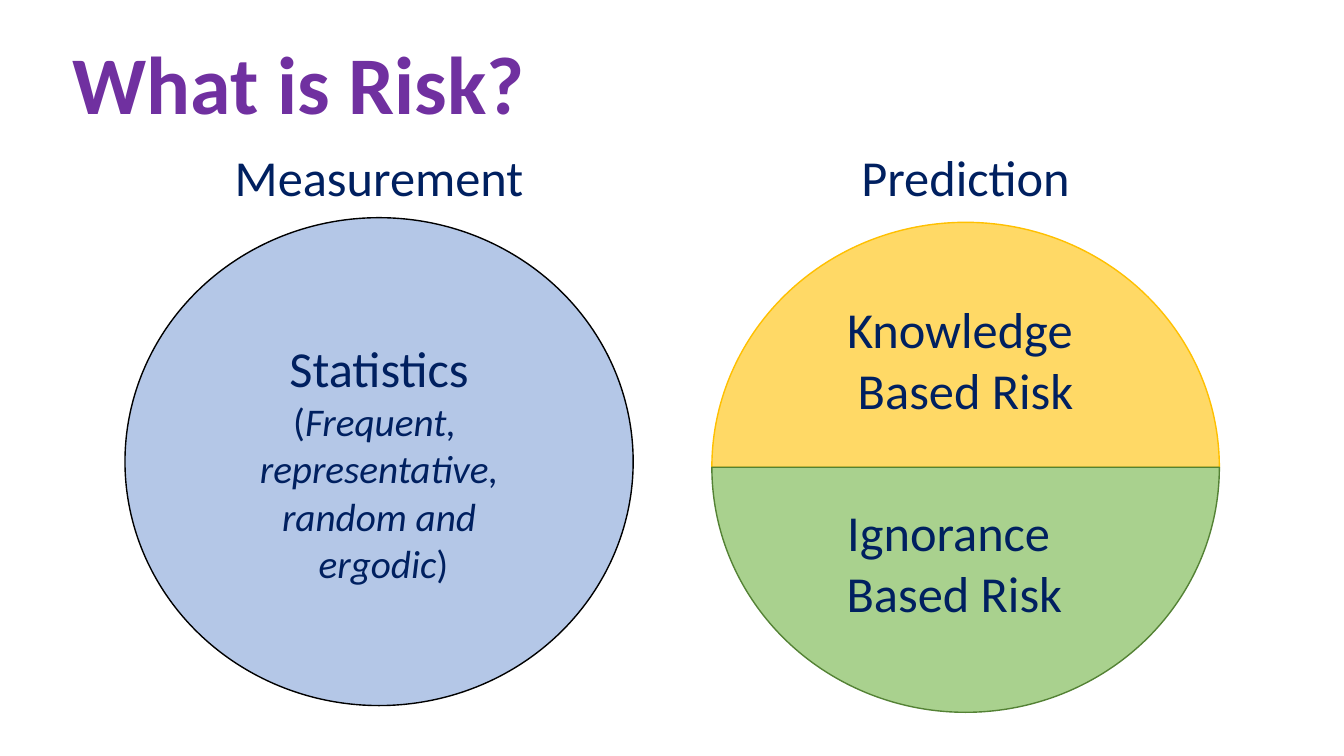
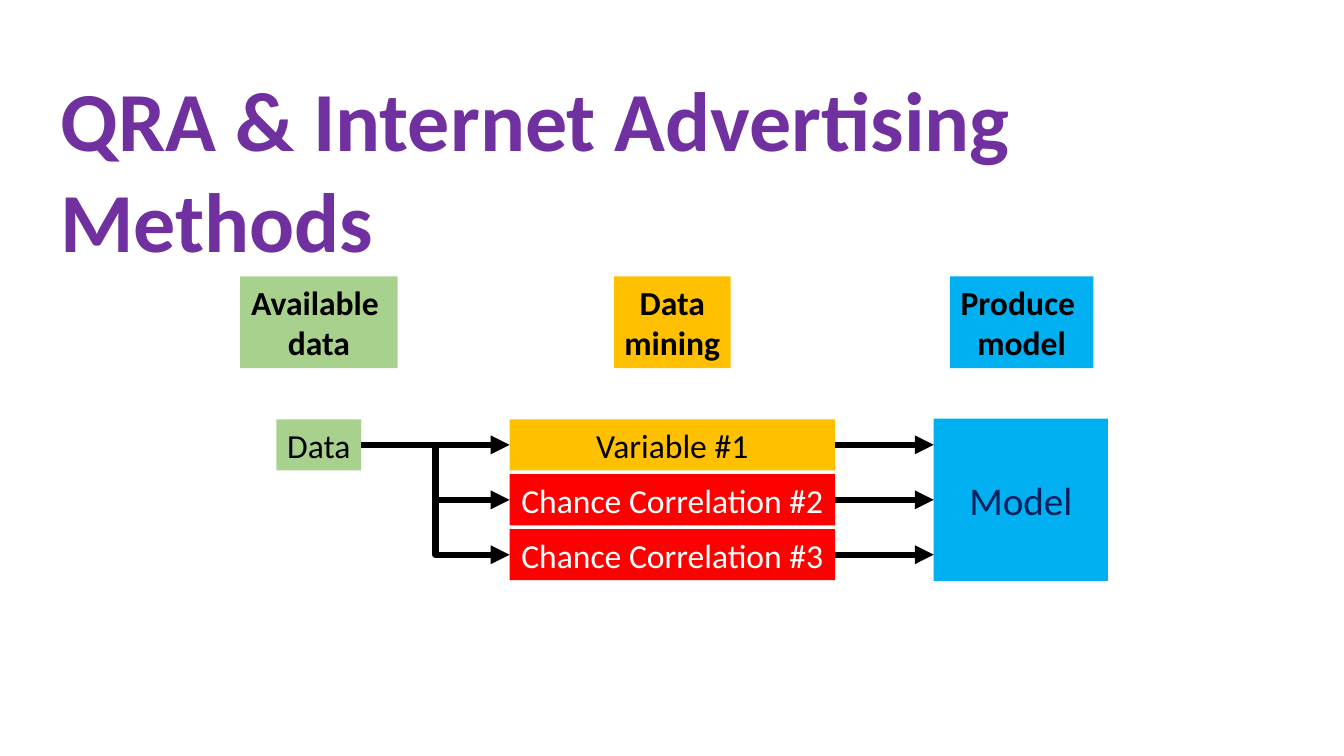
import pptx
import pptx.dml.color
import pptx.enum.shapes
import pptx.enum.text
import pptx.util
from pptx.oxml import parse_xml
from pptx.oxml.ns import nsdecls, qn

Pt = pptx.util.Pt
SHAPE = pptx.enum.shapes.MSO_SHAPE
CONNECTOR = pptx.enum.shapes.MSO_CONNECTOR
ALIGN = pptx.enum.text.PP_ALIGN
ANCHOR = pptx.enum.text.MSO_ANCHOR
AUTO_SIZE = pptx.enum.text.MSO_AUTO_SIZE

PURPLE, NAVY, BLACK, WHITE = "7030A0", "002060", "000000", "FFFFFF"
GREEN, AMBER, BLUE, RED = "A9D18E", "FFC000", "00B0F0", "FF0000"
TOP, LEFT, BOTTOM, RIGHT = range(4)
HEADING_H = 51
FONT = {"name": "Calibri", "size": Pt(24), "bold": False, "italic": False}


def rgb(value):
    return pptx.dml.color.RGBColor.from_string(value)


def add_run(p, text, color, **formats):
    """Add text to a paragraph, turning each newline into a line break."""
    for i, line in enumerate(text.split("\n")):
        if i:
            p.add_line_break()
        r = p.add_run()
        r.text = line
        for name, value in {**FONT, **formats}.items():
            setattr(r.font, name, value)
        r.font.color.rgb = rgb(color)


def set_frame(tf, anchor=ANCHOR.MIDDLE, wrap=False):
    tf.auto_size = AUTO_SIZE.NONE
    tf.word_wrap = wrap
    tf.vertical_anchor = anchor


def add_text(sp, paragraphs, color, align=ALIGN.CENTER):
    """Fill a shape; each paragraph is a list of (text, formats) runs."""
    tf = sp.text_frame
    set_frame(tf)
    for i, runs in enumerate(paragraphs):
        p = tf.paragraphs[0] if i == 0 else tf.add_paragraph()
        p.alignment = align
        for text, formats in runs:
            add_run(p, text, color, **formats)


def add_label(s, box, paragraphs):
    add_text(s.shapes.add_textbox(*map(Pt, box)), paragraphs, NAVY)


def add_shape(s, kind, box, fill, line=None):
    sp = s.shapes.add_shape(kind, *map(Pt, box))
    sp.shadow.inherit = False
    sp.fill.solid()
    sp.fill.fore_color.rgb = rgb(fill)
    if line:
        sp.line.color.rgb = rgb(line)
        sp.line.width = Pt(1)
    else:
        sp.line.fill.background()
    return sp


def add_block(s, box, fill, text, color=BLACK, **formats):
    sp = add_shape(s, SHAPE.RECTANGLE, box, fill)
    add_text(sp, [[(text, formats)]], color)
    return sp


def add_arrow(s, start, end, kind=CONNECTOR.STRAIGHT):
    """Draw an arrow between (x, y) points or (shape, side) pairs."""
    points = [(0, 0) if hasattr(e[0], "shape_id") else e for e in (start, end)]
    c = s.shapes.add_connector(kind, *(Pt(v) for point in points for v in point))
    for target, connect in ((start, c.begin_connect), (end, c.end_connect)):
        if hasattr(target[0], "shape_id"):
            connect(*target)
    c.line.color.rgb = rgb(BLACK)
    c.line.width = Pt(4.5)
    c.line._get_or_add_ln().append(
        parse_xml(f'<a:tailEnd {nsdecls("a")} type="triangle"/>'))
    c._element.find(qn("p:spPr")).append(
        parse_xml(f'<a:effectLst {nsdecls("a")}/>'))


def titled_slide(prs, title, box, size, spacing, anchor):
    s = prs.slides.add_slide(prs.slide_layouts[5])
    sp = s.shapes.title
    sp.left, sp.top, sp.width, sp.height = map(Pt, box)
    set_frame(sp.text_frame, anchor, wrap=True)
    p = sp.text_frame.paragraphs[0]
    p.alignment = ALIGN.LEFT
    p.line_spacing = spacing
    add_run(p, title, PURPLE, size=Pt(size), bold=True)
    return s


def measurement(s, x, y, w, h):
    big, small = {"size": Pt(36)}, {"size": Pt(28)}
    circle = (x, y + 54.7, w, h - 54.7)
    add_label(s, (x, y, w, HEADING_H), [[("Measurement", big)]])
    add_shape(s, SHAPE.OVAL, circle, "B4C7E7", BLACK)
    add_label(s, circle, [
        [("Statistics", big)],
        [("(", small),
         ("Frequent, \nrepresentative,\nrandom and\n ergodic", {**small, "italic": True}),
         (")", small)]])


def prediction(s, x, y, w, h):
    big = {"size": Pt(36)}
    top, half = y + 58, (h - 58) / 2
    add_label(s, (x, y, w, HEADING_H), [[("Prediction", big)]])
    halves = [
        ("Knowledge \nBased Risk", "FFD966", AMBER, (108, 0), 0, 10),
        ("Ignorance \nBased Risk", GREEN, "548235", (0, 108), -8, -20),
    ]
    for i, (text, fill, line, angles, dx, dy) in enumerate(halves):
        sp = add_shape(s, SHAPE.PIE, (x, top, w, 2 * half), fill, line)
        sp.adjustments[0], sp.adjustments[1] = angles
        add_label(s, (x + dx, top + i * half + dy, w, half), [[(text, big)]])


def stage_headers(s, x, y, h):
    stages = [("Available \ndata", 0, 112.5, GREEN),
              ("Data\nmining", 267, 83.5, AMBER),
              ("Produce \nmodel", 507, 102.5, BLUE)]
    for text, dx, w, fill in stages:
        add_block(s, (x + dx, y, w, h), fill, text, bold=True)


def model_flow(s, x, y, w, h):
    row_h, step = 36.5, 39.25
    var_x, var_w, model_w = x + 166.5, 232.5, 124.5
    model_x = x + w - model_w
    data = add_block(s, (x, y + 0.5, 60.5, row_h), GREEN, "Data")
    model = add_block(s, (model_x, y, model_w, h), BLUE, "Model", NAVY, size=Pt(28))
    rows = [("Variable #1", AMBER, BLACK),
            ("Chance Correlation #2", RED, WHITE),
            ("Chance Correlation #3", RED, WHITE)]
    for i, (text, fill, color) in enumerate(rows):
        row_y = y + 0.5 + i * step
        sp = add_block(s, (var_x, row_y, var_w, row_h), fill, text, color)
        kind = CONNECTOR.ELBOW if i else CONNECTOR.STRAIGHT
        add_arrow(s, (data, RIGHT), (sp, LEFT), kind)
        middle_row = i == len(rows) // 2
        end = (model, LEFT) if middle_row else (model_x, row_y + row_h / 2)
        add_arrow(s, (sp, RIGHT), end)


def risk_slide(prs):
    s = titled_slide(prs, "What is Risk?", (44.5, 30, 351.5, 70.5), 58.5, 0.8,
                     ANCHOR.MIDDLE)
    measurement(s, 89.3, 100.8, 363, 403.2)
    prediction(s, 508.5, 100.8, 362.5, 408)


def methods_slide(prs):
    s = titled_slide(prs, "QRA & Internet Advertising Methods",
                     (36, 44.5, 888.5, 80), 60, 1.0, ANCHOR.TOP)
    stage_headers(s, 171.5, 197.5, 65.5)
    model_flow(s, 197.5, 299, 594, 116)


def main():
    prs = pptx.Presentation()
    prs.slide_width, prs.slide_height = Pt(960), Pt(540)
    risk_slide(prs)
    methods_slide(prs)
    prs.save("out.pptx")


if __name__ == "__main__":
    main()
